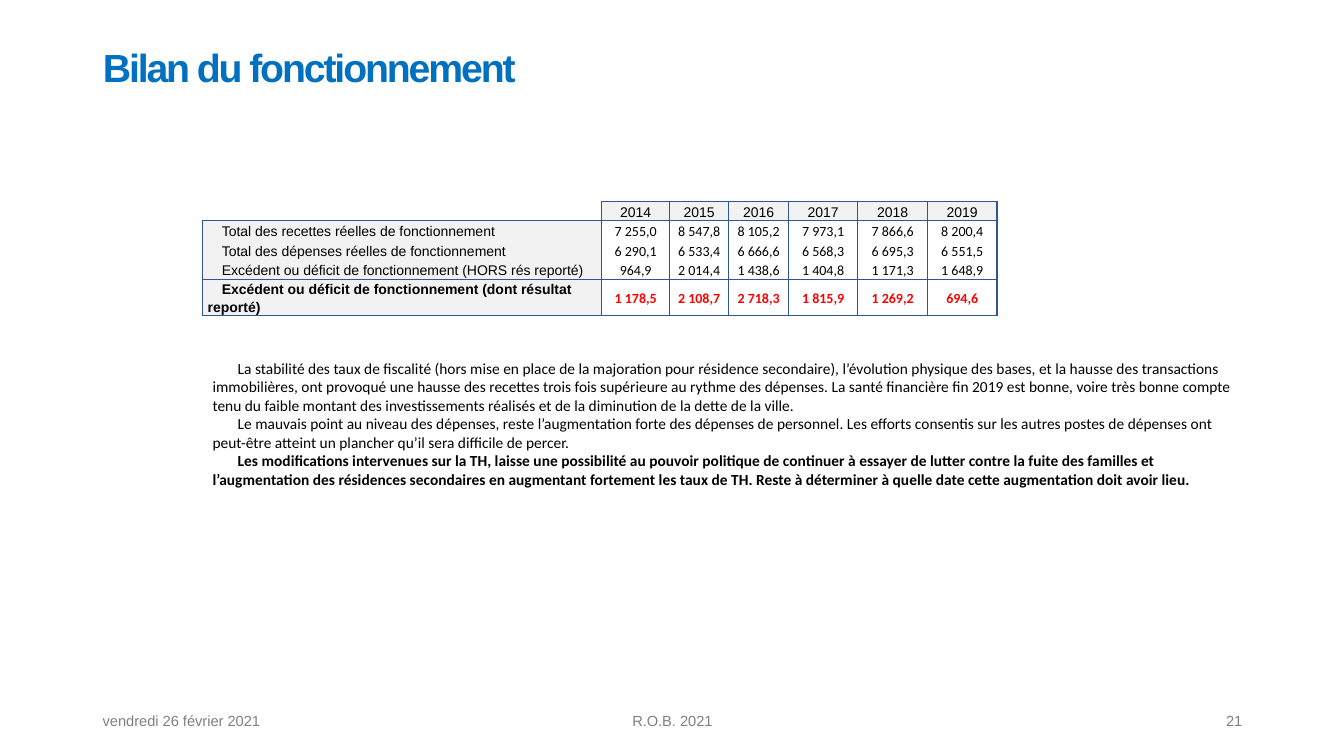
import pptx
import pptx.dml.color
import pptx.enum.text
import pptx.oxml
import pptx.oxml.ns
import pptx.util

Inches, Pt = pptx.util.Inches, pptx.util.Pt
ALIGN = pptx.enum.text.PP_ALIGN
ANCHOR = pptx.enum.text.MSO_ANCHOR

COLORS = {
    "title": "0070C0", "text": "000000", "footer": "808080", "alert": "FF0000",
    "border": "305496", "label": "F2F2F2", "value": "FFFFFF",
}

YEARS = ["2014", "2015", "2016", "2017", "2018", "2019"]
BALANCE = [
    ["", *YEARS],
    ["Total des recettes réelles de fonctionnement",
     "7 255,0", "8 547,8", "8 105,2", "7 973,1", "7 866,6", "8 200,4"],
    ["Total des dépenses réelles de fonctionnement",
     "6 290,1", "6 533,4", "6 666,6", "6 568,3", "6 695,3", "6 551,5"],
    ["Excédent ou déficit de fonctionnement (HORS rés reporté)",
     "964,9", "2 014,4", "1 438,6", "1 404,8", "1 171,3", "1 648,9"],
    ["Excédent ou déficit de fonctionnement (dont résultat reporté)",
     "1 178,5", "2 108,7", "2 718,3", "1 815,9", "1 269,2", "694,6"],
]
COL_WIDTHS = [3.96, 0.67, 0.59, 0.59, 0.69, 0.69, 0.69]
ROW_HEIGHTS = [0.19, 0.19, 0.19, 0.19, 0.21]
ROW_BORDERS = ["LRTB", "LRT", "LR", "LRB", "LRTB"]

COMMENTS = [
    ("La stabilité des taux de fiscalité (hors mise en place de la majoration pour résidence "
     "secondaire), l’évolution physique des bases, et la hausse des transactions immobilières, "
     "ont provoqué une hausse des recettes trois fois supérieure au rythme des dépenses. La santé "
     "financière fin 2019 est bonne, voire très bonne compte tenu du faible montant des "
     "investissements réalisés et de la diminution de la dette de la ville.", False),
    ("Le mauvais point au niveau des dépenses, reste l’augmentation forte des dépenses de "
     "personnel. Les efforts consentis sur les autres postes de dépenses ont peut-être atteint "
     "un plancher qu’il sera difficile de percer.", False),
    ("Les modifications intervenues sur la TH, laisse une possibilité au pouvoir politique de "
     "continuer à essayer de lutter contre la fuite des familles et l’augmentation des résidences "
     "secondaires en augmentant fortement les taux de TH. Reste à déterminer à quelle date cette "
     "augmentation doit avoir lieu.", True),
]


class Deck:
    def __init__(self):
        self.prs = pptx.Presentation()
        self.prs.slide_width, self.prs.slide_height = Inches(13.33), Inches(7.5)
        self.slide = self.prs.slides.add_slide(self.prs.slide_layouts[5])

    def color(self, name):
        return pptx.dml.color.RGBColor.from_string(COLORS[name])

    def add_text(self, p, text, size, font, color, bold=False, align=ALIGN.LEFT,
                 indent=0, spacing=None):
        p.alignment = align
        if indent:
            pPr = p._p.get_or_add_pPr()
            pPr.set("marL", "0")
            pPr.set("indent", str(Inches(indent)))
        if spacing:
            p.line_spacing = spacing
        r = p.add_run()
        r.text = text
        r.font.size, r.font.name, r.font.bold = Pt(size), font, bold
        r.font.color.rgb = self.color(color)
        return r

    def title(self, text, left, top, width, height):
        sp = self.slide.shapes.title
        sp.left, sp.top = Inches(left), Inches(top)
        sp.width, sp.height = Inches(width), Inches(height)
        tf = sp.text_frame
        tf.vertical_anchor = ANCHOR.TOP
        tf.margin_top = Inches(0.08)
        r = self.add_text(tf.paragraphs[0], text, 28, "Arial", "title", True, spacing=0.9)
        r._r.get_or_add_rPr().set("spc", "-150")

    def text_box(self, left, top, width, height, anchor=ANCHOR.TOP):
        sp = self.slide.shapes.add_textbox(
            Inches(left), Inches(top), Inches(width), Inches(height))
        tf = sp.text_frame
        tf.word_wrap = True
        tf.vertical_anchor = anchor
        return tf

    def footer(self, text, left, width, align):
        tf = self.text_box(left, 6.95, width, 0.4, ANCHOR.MIDDLE)
        self.add_text(tf.paragraphs[0], text, 10.5, "Arial", "footer", align=align)

    def comments(self, items, left, top, width, height):
        tf = self.text_box(left, top, width, height)
        for i, (text, bold) in enumerate(items):
            p = tf.add_paragraph() if i else tf.paragraphs[0]
            self.add_text(p, text, 11, "Calibri", "text", bold, indent=0.25)

    def borders(self, cell, sides):
        tcPr = cell._tc.get_or_add_tcPr()
        for side in "LRTB":
            line = (f'<a:solidFill><a:srgbClr val="{COLORS["border"]}"/></a:solidFill>'
                    if side in sides else "<a:noFill/>")
            tcPr.append(pptx.oxml.parse_xml(
                f'<a:ln{side} {pptx.oxml.ns.nsdecls("a")} w="{Pt(1)}">{line}</a:ln{side}>'))

    def cell(self, cell, text, row, col):
        is_label = row == 0 or col == 0
        is_total = row == len(BALANCE) - 1
        self.borders(cell, ROW_BORDERS[row] if text else "RB")
        if text:
            cell.fill.solid()
            cell.fill.fore_color.rgb = self.color("label" if is_label else "value")
        else:
            cell.fill.background()
        cell.vertical_anchor = ANCHOR.MIDDLE
        cell.margin_left = cell.margin_right = Inches(0.05)
        cell.margin_top = cell.margin_bottom = 0
        p = cell.text_frame.paragraphs[0]
        if not text:
            p.font.size = Pt(10)
            return
        self.add_text(p, text, 10, "Arial" if is_label else "Calibri",
                      "alert" if is_total and col else "text", is_total,
                      ALIGN.CENTER if col else ALIGN.LEFT,
                      0 if col else 0.14, 1.15)

    def table(self, rows, left, top):
        tbl = self.slide.shapes.add_table(
            len(rows), len(COL_WIDTHS), Inches(left), Inches(top),
            Inches(sum(COL_WIDTHS)), Inches(sum(ROW_HEIGHTS))).table
        tbl.first_row = tbl.horz_banding = False
        for column, width in zip(tbl.columns, COL_WIDTHS):
            column.width = Inches(width)
        for i, values in enumerate(rows):
            tbl.rows[i].height = Inches(ROW_HEIGHTS[i])
            for j, text in enumerate(values):
                self.cell(tbl.cell(i, j), text, i, j)


def main():
    deck = Deck()
    # Title
    deck.title("Bilan du fonctionnement", 0.92, 0.4, 11.5, 1.06)
    # Balance by year
    deck.table(BALANCE, 2.01, 2)
    # Footer
    deck.footer("vendredi 26 février 2021", 0.92, 3, ALIGN.LEFT)
    deck.footer("R.O.B. 2021", 4.42, 4.5, ALIGN.CENTER)
    deck.footer("21", 9.42, 3, ALIGN.RIGHT)
    # Comments
    deck.comments(COMMENTS, 2.01, 3.51, 10.34, 1.4)
    deck.prs.save("out.pptx")


if __name__ == "__main__":
    main()
